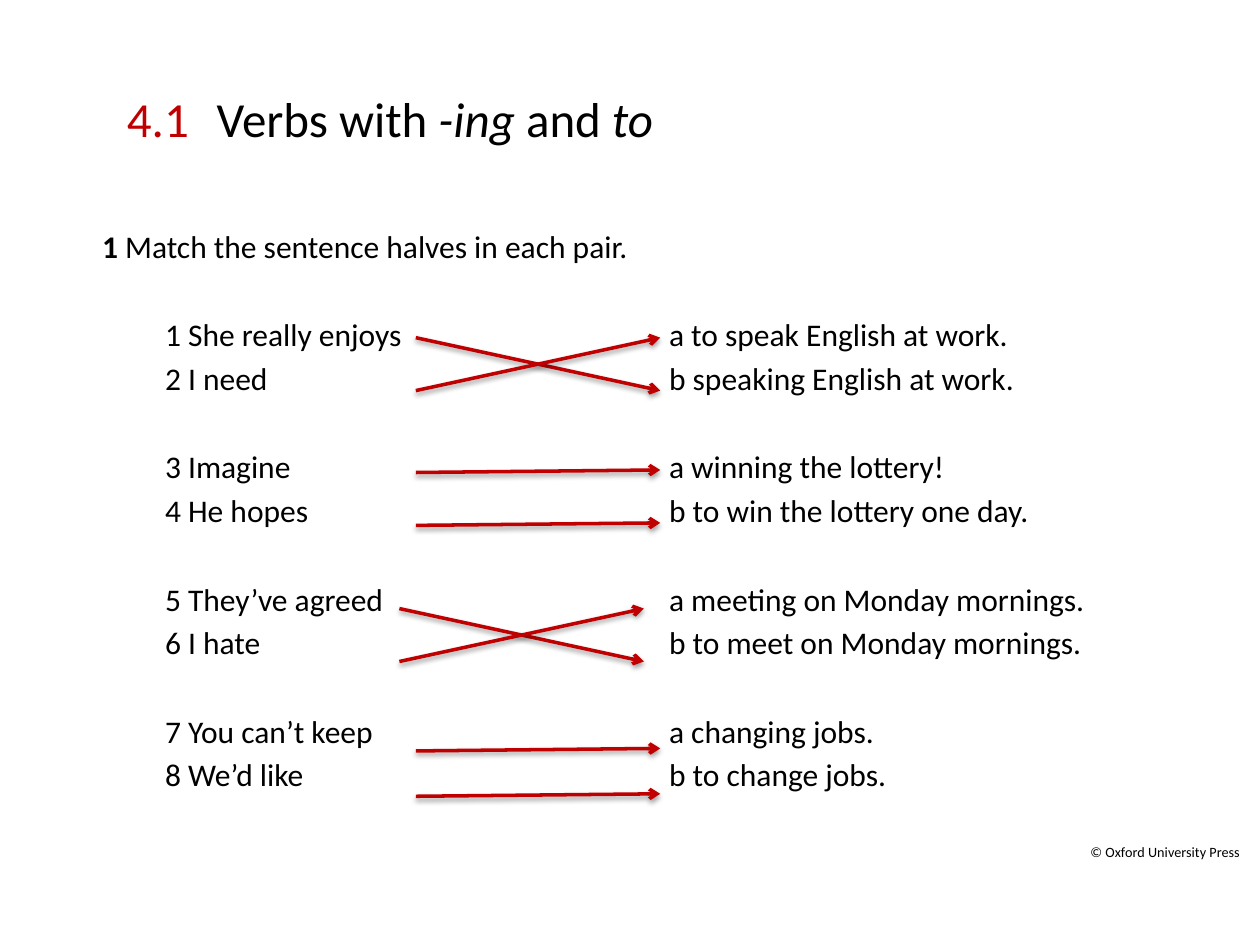
from dataclasses import dataclass

from lxml import etree
from pptx import Presentation
from pptx.dml.color import RGBColor
from pptx.enum.shapes import MSO_CONNECTOR
from pptx.enum.text import MSO_ANCHOR, MSO_AUTO_SIZE, PP_ALIGN
from pptx.oxml.ns import qn
from pptx.util import Inches, Pt

STRAIGHT = MSO_CONNECTOR.STRAIGHT
LEFT, RIGHT = PP_ALIGN.LEFT, PP_ALIGN.RIGHT
MIDDLE, TOP = MSO_ANCHOR.MIDDLE, MSO_ANCHOR.TOP
NO_FIT = MSO_AUTO_SIZE.NONE
TITLE_AND_CONTENT = 1


@dataclass(frozen=True)
class Theme:
    font: str = "Calibri"
    ink: RGBColor = RGBColor(0x00, 0x00, 0x00)
    accent: RGBColor = RGBColor(0xC0, 0x00, 0x00)
    title_size: int = 28
    body_size: int = 18
    credit_size: int = 14
    row_gap: float = 3.4
    pair_gap: float = 28.9
    line_width: int = 2


THEME = Theme()
START_COLUMN, ENDING_COLUMN = 0.5, 4.5

PAIRS = [
    (("1 She really enjoys", "a to speak English at work."),
     ("2 I need", "b speaking English at work.")),
    (("3 Imagine", "a winning the lottery!"),
     ("4 He hopes", "b to win the lottery one day.")),
    (("5 They’ve agreed", "a meeting on Monday mornings."),
     ("6 I hate", "b to meet on Monday mornings.")),
    (("7 You can’t keep", "a changing jobs."),
     ("8 We’d like", "b to change jobs.")),
]

# Left, top, width and height of each pair of arrows, and whether they cross
ARROW_PAIRS = [
    ((3.3, 2.68, 1.94, 0.42), True),
    ((3.3, 3.75, 1.94, 0.42), False),
    ((3.17, 4.83, 1.94, 0.42), True),
    ((3.3, 5.96, 1.94, 0.36), False),
]
ARROW_RISE = 0.02


def place(shape, box):
    shape.left, shape.top, shape.width, shape.height = map(Inches, box)


def add_span(para, text, size, color=THEME.ink, bold=False, italic=False):
    span = para.add_run()
    span.text = text
    font = span.font
    font.name, font.size = THEME.font, Pt(size)
    font.bold, font.italic = bold, italic
    font.color.rgb = color
    return span


def add_label(page, box, text, size, color, align):
    label = page.shapes.add_textbox(*map(Inches, box))
    label.text_frame.word_wrap = False
    para = label.text_frame.paragraphs[0]
    para.alignment = align
    return add_span(para, text, size, color)


def add_credit(page, box):
    span = add_label(page, box, "© Oxford University Press",
                     THEME.credit_size, THEME.ink, RIGHT)
    span.font._element.set("baseline", "30000")


def add_title(page, box):
    title = page.shapes.title
    place(title, box)
    frame = title.text_frame
    frame.auto_size, frame.vertical_anchor = NO_FIT, MIDDLE
    para = frame.paragraphs[0]
    para.alignment = LEFT
    for text, italic in (("Verbs with ", False), ("-ing ", True),
                         ("and ", False), ("to", True)):
        add_span(para, text, THEME.title_size, italic=italic)


def format_row(para, gap, first=0, hanging=0):
    """Set an unbulleted row from first, with a tab stop at hanging."""
    para.alignment = LEFT
    para.space_before = Pt(gap)
    props = para._p.get_or_add_pPr()
    props.set("marL", str(Inches(hanging)))
    props.set("indent", str(Inches(first - hanging)))
    etree.SubElement(props, qn("a:buNone"))
    if hanging:
        tabs = etree.SubElement(props, qn("a:tabLst"))
        etree.SubElement(tabs, qn("a:tab"), pos=str(Inches(hanging)), algn="l")


def add_exercise(page, box):
    body = page.placeholders[1]
    place(body, box)
    frame = body.text_frame
    frame.auto_size, frame.vertical_anchor = NO_FIT, TOP
    para = frame.paragraphs[0]
    format_row(para, 0)
    add_span(para, "1", THEME.body_size, bold=True)
    add_span(para, " Match the sentence halves in each pair.", THEME.body_size)
    for pair in PAIRS:
        for gap, (start, ending) in zip((THEME.pair_gap, THEME.row_gap), pair):
            para = frame.add_paragraph()
            format_row(para, gap, START_COLUMN, ENDING_COLUMN)
            add_span(para, f"{start}\t{ending}", THEME.body_size)


def add_shadow(arrow):
    effects = etree.SubElement(arrow._element.spPr, qn("a:effectLst"))
    shadow = etree.SubElement(
        effects, qn("a:outerShdw"), blurRad=str(Pt(3.1)), dist=str(Pt(1.6)),
        dir="5400000", rotWithShape="0")
    color = etree.SubElement(shadow, qn("a:srgbClr"), val=str(THEME.ink))
    etree.SubElement(color, qn("a:alpha"), val="38000")


def add_arrow(page, start, end):
    arrow = page.shapes.add_connector(STRAIGHT, *map(Inches, start + end))
    arrow.line.color.rgb = THEME.accent
    arrow.line.width = Pt(THEME.line_width)
    etree.SubElement(arrow.line._get_or_add_ln(), qn("a:tailEnd"), type="arrow")
    add_shadow(arrow)


def add_arrow_pair(page, box, crossed):
    left, top, width, height = box
    starts = (top, top + height)
    ends = starts[::-1] if crossed else [y - ARROW_RISE for y in starts]
    for start_y, end_y in zip(starts, ends):
        add_arrow(page, (left, start_y), (left + width, end_y))


def main():
    deck = Presentation()
    deck.slide_width, deck.slide_height = Inches(10), Inches(7.5)
    page = deck.slides.add_slide(deck.slide_layouts[TITLE_AND_CONTENT])
    add_credit(page, (8.36, 6.62, 1.58, 0.26))
    add_title(page, (1.62, 0.31, 7.88, 1.25))
    add_exercise(page, (0.71, 1.75, 8.79, 4.53))
    add_label(page, (0.91, 0.65, 0.7, 0.57), "4.1",
              THEME.title_size, THEME.accent, LEFT)
    for box, crossed in ARROW_PAIRS:
        add_arrow_pair(page, box, crossed)
    deck.save("out.pptx")


if __name__ == "__main__":
    main()
